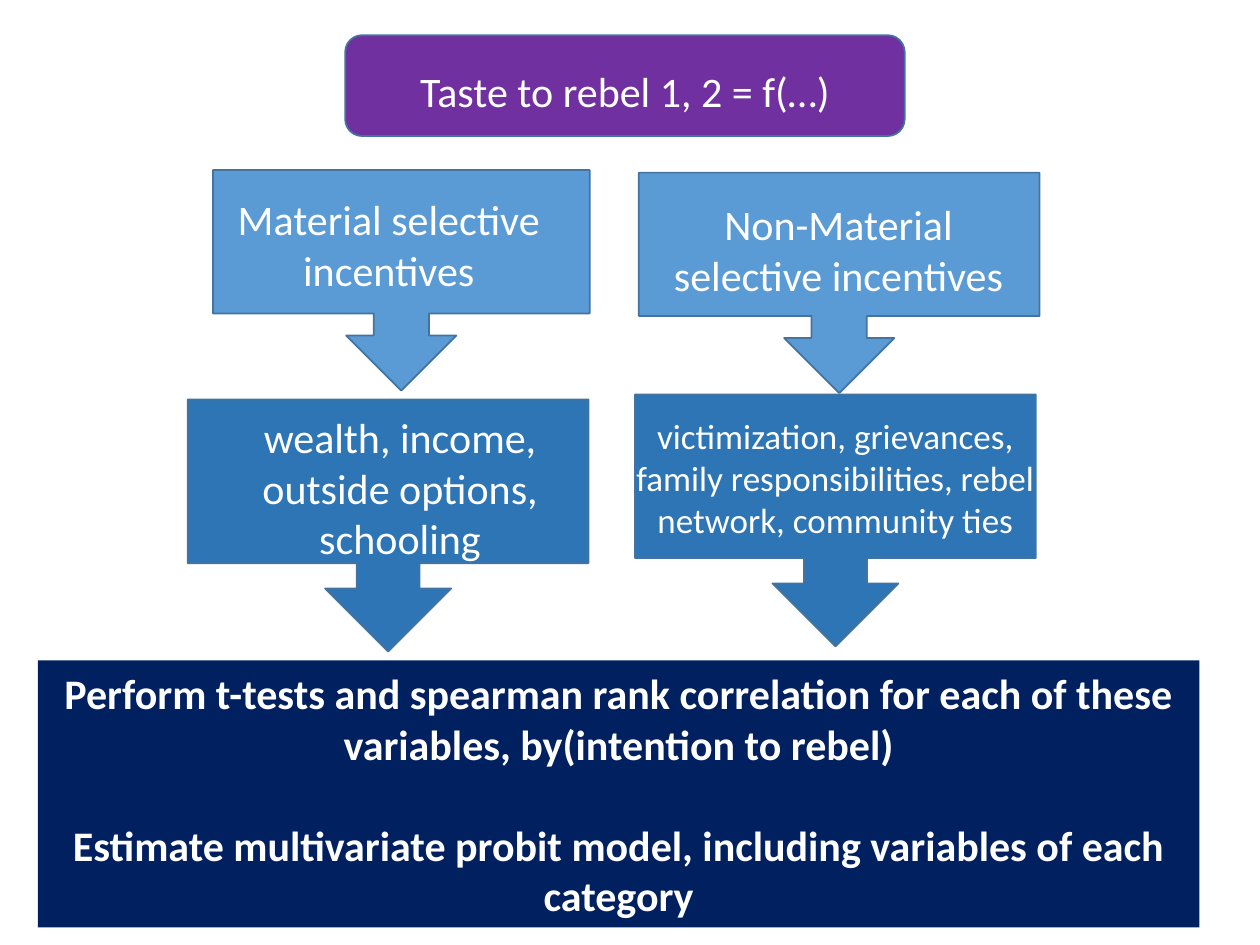
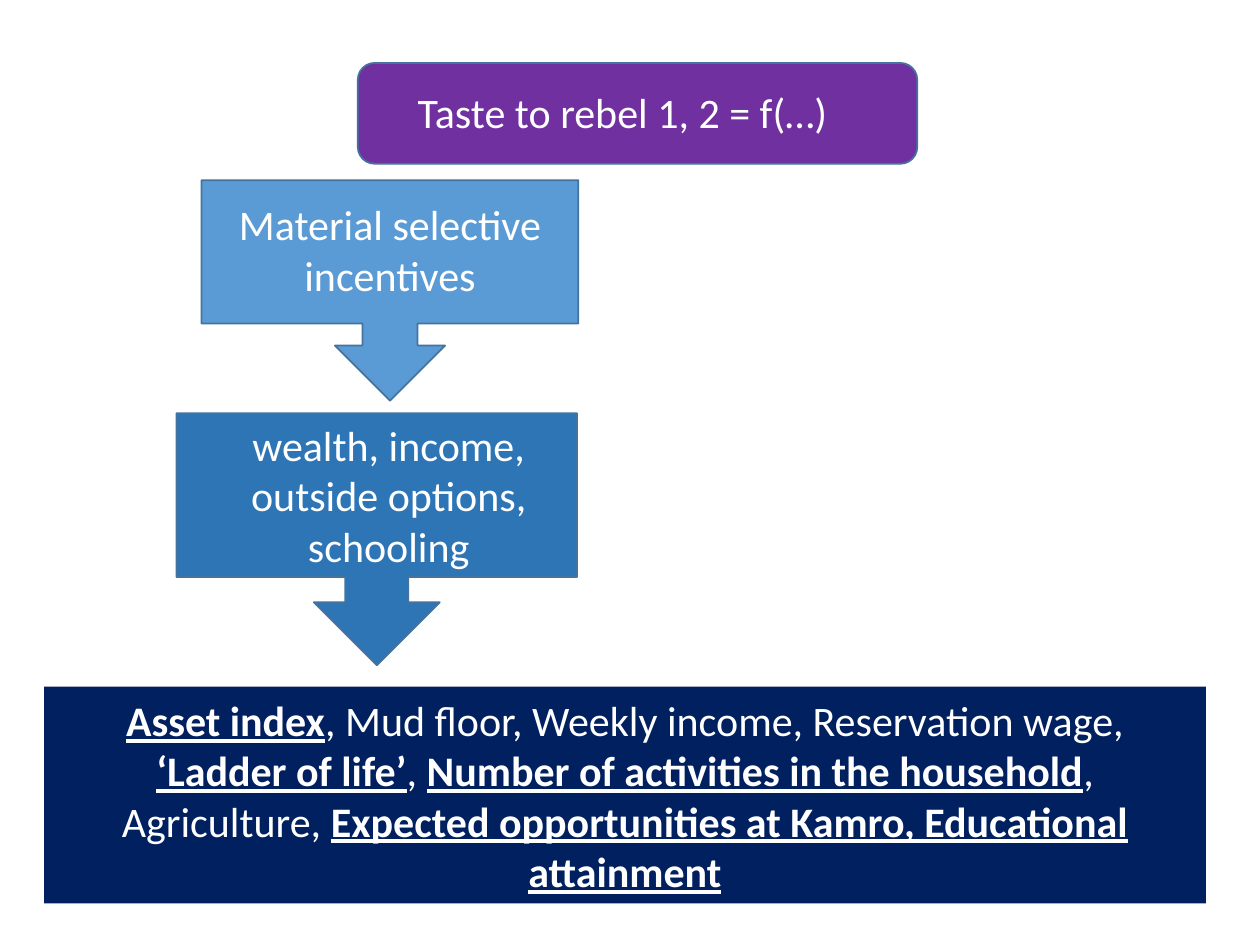
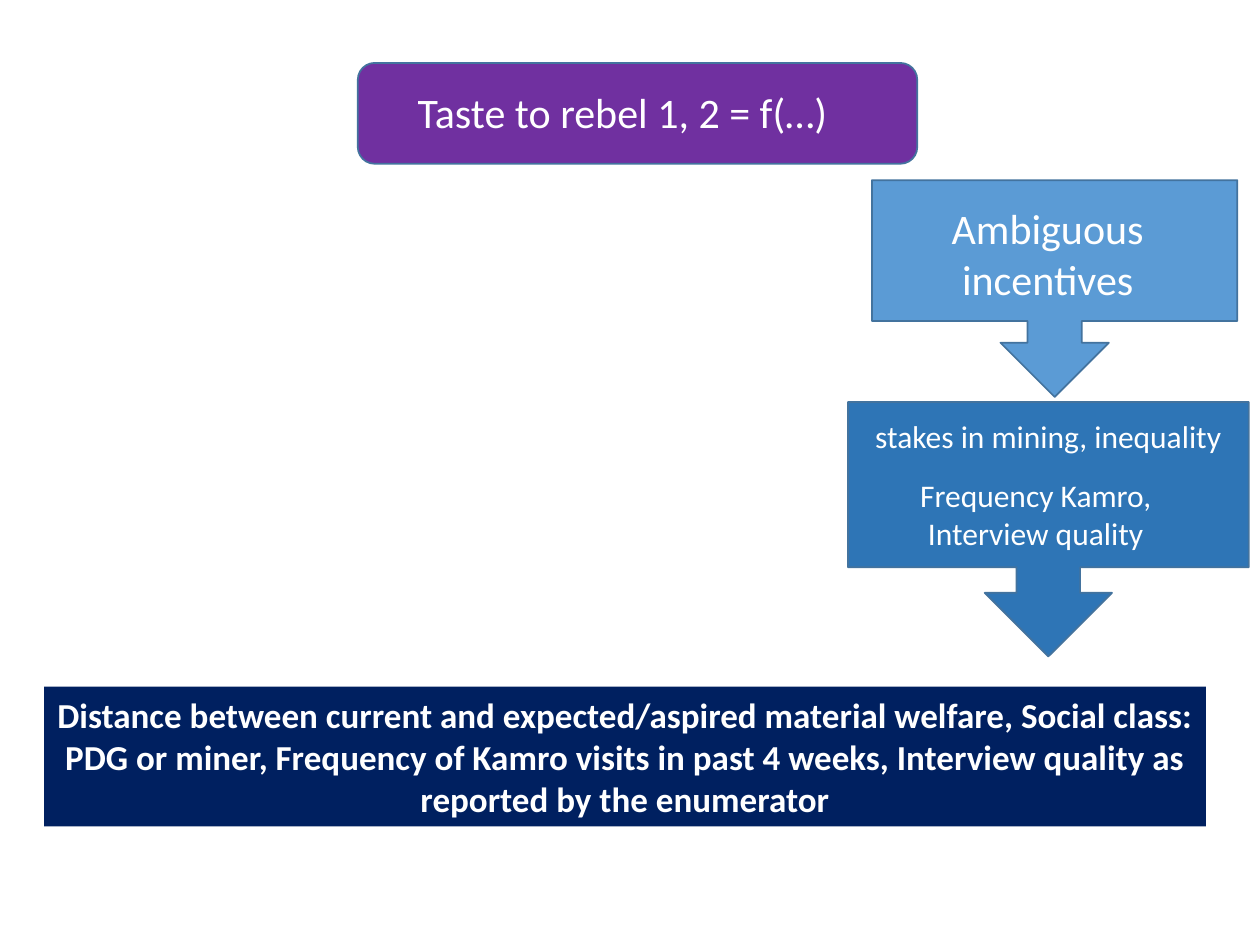
from typing import NamedTuple

from pptx import Presentation
from pptx.dml.color import RGBColor
from pptx.enum.shapes import MSO_SHAPE
from pptx.enum.text import MSO_ANCHOR, PP_ALIGN
from pptx.util import Emu, Pt

ROUNDED, RECT = MSO_SHAPE.ROUNDED_RECTANGLE, MSO_SHAPE.RECTANGLE
CALLOUT = MSO_SHAPE.UP_ARROW_CALLOUT
CENTER = PP_ALIGN.CENTER
TOP, MIDDLE = MSO_ANCHOR.TOP, MSO_ANCHOR.MIDDLE

PX = 9144
FONT = "Calibri"
PARA_GAP = 29
COLORS = {
    "banner": "7030A0",
    "incentive": "5B9BD5",
    "variables": "2E75B6",
    "panel": "002060",
    "outline": "43739E",
    "text": "FFFFFF",
}


class Frame(NamedTuple):
    """Left, top, width and height in px."""

    x: int
    y: int
    w: int
    h: int


class Span(NamedTuple):
    """A stretch of text in one style."""

    text: str
    bold: bool = False
    underline: bool = False


class Label(NamedTuple):
    """A one-paragraph text box."""

    frame: Frame
    text: str
    size: int = 24


class Callout(NamedTuple):
    """A box with a downward arrow and the labels on it."""

    frame: Frame
    fill: str
    labels: list[Label]


class Panel(NamedTuple):
    """The dark conclusion block at the foot of a slide."""

    frame: Frame
    paragraphs: list[list[Span]]
    size: int = 24


class Diagram(NamedTuple):
    """The content of one slide."""

    banner: Frame
    title: Frame
    callouts: list[Callout]
    panel: Panel


TITLE = "Taste to rebel 1, 2 = f(…)"
MATERIAL = "Material selective incentives"
WEALTH = "wealth, income, outside options, schooling"
BANNER, TITLE_BOX = Frame(284, 50, 444, 80), Frame(296, 64, 396, 50)

DIAGRAMS = [
    Diagram(
        Frame(274, 28, 444, 80),
        Frame(298, 47, 396, 50),
        [
            Callout(Frame(169, 135, 299, 175), "incentive",
                    [Label(Frame(159, 149, 299, 91), MATERIAL)]),
            Callout(Frame(507, 137, 318, 175), "incentive",
                    [Label(Frame(506, 153, 319, 91), "Non-Material selective incentives")]),
            Callout(Frame(149, 317, 318, 200), "variables",
                    [Label(Frame(167, 322, 301, 162), WEALTH)]),
            Callout(Frame(504, 313, 318, 200), "variables",
                    [Label(Frame(493, 324, 340, 111),
                           "victimization, grievances, family responsibilities, "
                           "rebel network, community ties", 20)]),
        ],
        Panel(Frame(30, 524, 922, 212), [
            [Span("Perform t-tests and spearman rank correlation for each of these "
                  "variables, by(intention to rebel)", bold=True)],
            [Span("Estimate multivariate probit model, including variables of each "
                  "category", bold=True)],
        ]),
    ),
    Diagram(
        BANNER,
        TITLE_BOX,
        [
            Callout(Frame(160, 143, 299, 175), "incentive",
                    [Label(Frame(160, 153, 299, 91), MATERIAL)]),
            Callout(Frame(140, 328, 318, 200), "variables",
                    [Label(Frame(158, 328, 301, 162), WEALTH)]),
        ],
        Panel(Frame(35, 545, 922, 172), [[
            Span("Asset index", True, True),
            Span(", Mud floor, Weekly income, Reservation wage, "),
            Span("‘Ladder of life’", True, True),
            Span(", "),
            Span("Number of activities in the household", True, True),
            Span(", Agriculture, "),
            Span("Expected opportunities at Kamro, Educational attainment", True, True),
        ]]),
    ),
    Diagram(
        BANNER,
        TITLE_BOX,
        [
            Callout(Frame(692, 143, 290, 172), "incentive",
                    [Label(Frame(719, 156, 225, 91), "Ambiguous incentives")]),
            Callout(Frame(673, 319, 318, 202), "variables", [
                Label(Frame(683, 326, 298, 40), "stakes in mining, inequality", 18),
                Label(Frame(673, 373, 298, 71), "Frequency Kamro, Interview quality", 18),
            ]),
        ],
        Panel(Frame(35, 545, 922, 111), [
            [Span("Distance between current and expected/aspired material welfare, "
                  "Social class: PDG or miner, Frequency of Kamro visits in past 4 weeks, "
                  "Interview quality as reported by the enumerator", bold=True)],
        ], 20),
    ),
]


def rgb(name: str) -> RGBColor:
    """Look up a named colour."""
    return RGBColor.from_string(COLORS[name])


def emu(frame: Frame) -> list[Emu]:
    """Scale a frame from px to EMU."""
    return [Emu(v * PX) for v in frame]


def add_box(slide, kind, frame: Frame, fill: str, outlined: bool = True):
    """Draw a filled preset shape."""
    sp = slide.shapes.add_shape(kind, *emu(frame))
    sp.shadow.inherit = False
    sp.fill.solid()
    sp.fill.fore_color.rgb = rgb(fill)
    if outlined:
        sp.line.color.rgb = rgb("outline")
        sp.line.width = Pt(1)
    else:
        sp.line.fill.background()
    return sp


def write(sp, paragraphs: list[list[Span]], size: int, anchor) -> None:
    """Fill a shape with centred white paragraphs."""
    tf = sp.text_frame
    tf.word_wrap = True
    tf.vertical_anchor = anchor
    for i, spans in enumerate(paragraphs):
        p = tf.add_paragraph() if i else tf.paragraphs[0]
        p.alignment = CENTER
        if i:
            p.space_before = Pt(PARA_GAP)
        for span in spans:
            r = p.add_run()
            r.text = span.text
            r.font.name = FONT
            r.font.size = Pt(size)
            r.font.bold = span.bold
            r.font.underline = span.underline
            r.font.color.rgb = rgb("text")


def add_label(slide, label: Label) -> None:
    """Draw a text box."""
    sp = slide.shapes.add_textbox(*emu(label.frame))
    write(sp, [[Span(label.text)]], label.size, TOP)


def add_callout(slide, callout: Callout) -> None:
    """Draw an arrow box turned to point down, with its labels."""
    sp = add_box(slide, CALLOUT, callout.frame, callout.fill)
    sp.rotation = 180
    for label in callout.labels:
        add_label(slide, label)


def add_panel(slide, panel: Panel) -> None:
    """Draw the conclusion block."""
    sp = add_box(slide, RECT, panel.frame, "panel", outlined=False)
    write(sp, panel.paragraphs, panel.size, MIDDLE)


def add_diagram(prs, diagram: Diagram) -> None:
    """Add one slide with its banner, callouts and panel."""
    s = prs.slides.add_slide(prs.slide_layouts[6])
    add_box(s, ROUNDED, diagram.banner, "banner")
    add_label(s, Label(diagram.title, TITLE))
    for callout in diagram.callouts:
        add_callout(s, callout)
    add_panel(s, diagram.panel)


def main() -> None:
    """Build and save the presentation."""
    prs = Presentation()
    prs.slide_width, prs.slide_height = Emu(1000 * PX), Emu(750 * PX)
    for diagram in DIAGRAMS:
        add_diagram(prs, diagram)
    prs.save("out.pptx")


if __name__ == "__main__":
    main()
